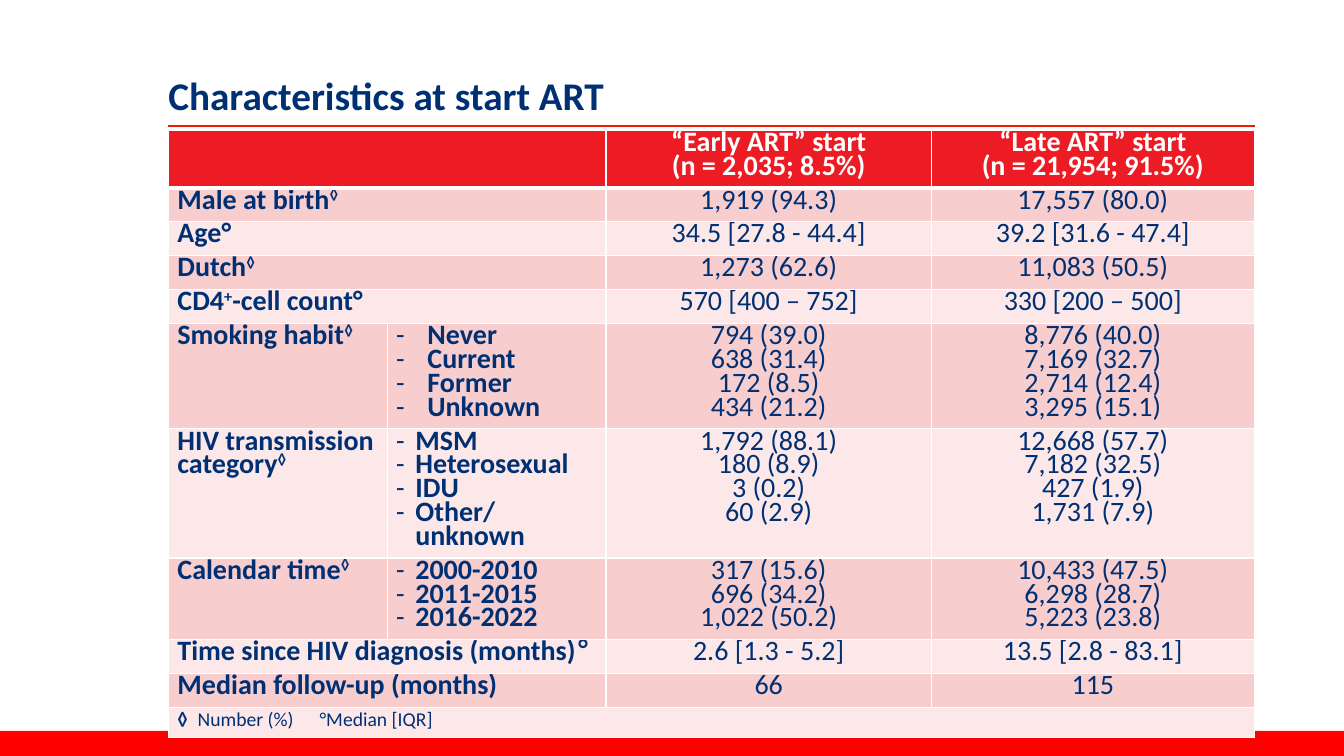
from dataclasses import dataclass

from lxml.etree import SubElement
from pptx import Presentation
from pptx.dml.color import RGBColor
from pptx.enum.shapes import MSO_CONNECTOR, MSO_SHAPE
from pptx.enum.text import MSO_ANCHOR, MSO_AUTO_SIZE, PP_ALIGN
from pptx.oxml.ns import qn
from pptx.util import Inches, Pt


@dataclass(frozen=True)
class Theme:
    navy: str = "003074"
    white: str = "FFFFFF"
    header: str = "ED1C24"
    rule: str = "ED1C00"
    bar: str = "FF0000"
    bands: tuple = ("F8CDCD", "FCE8E8")
    font: str = "Calibri"
    symbol_font: str = "DejaVu Sans"
    title_size: int = 28
    body_size: int = 20
    note_size: int = 14
    body_leading: int = 17
    note_leading: int = 14


THEME = Theme()
TITLE = "Characteristics at start ART"
HEADINGS = [
    ["“Early ART” start", "(n = 2,035; 8.5%)"],
    ["“Late ART” start", "(n = 21,954; 91.5%)"],
]
NUMBER = ("◊", "super")
ROWS = [
    (["Male at birth", NUMBER], [], ["1,919 (94.3)"], ["17,557 (80.0)"]),
    (["Age°"], [], ["34.5 [27.8 - 44.4]"], ["39.2 [31.6 - 47.4]"]),
    (["Dutch", NUMBER], [], ["1,273 (62.6)"], ["11,083 (50.5)"]),
    (["CD4", ("+", "super"), "-cell count°"], [], ["570 [400 – 752]"], ["330 [200 – 500]"]),
    (["Smoking habit", NUMBER], ["Never", "Current", "Former", "Unknown"],
     ["794 (39.0)", "638 (31.4)", "172 (8.5)", "434 (21.2)"],
     ["8,776 (40.0)", "7,169 (32.7)", "2,714 (12.4)", "3,295 (15.1)"]),
    (["HIV transmission category", NUMBER], ["MSM", "Heterosexual", "IDU", "Other/unknown"],
     ["1,792 (88.1)", "180 (8.9)", "3 (0.2)", "60 (2.9)"],
     ["12,668 (57.7)", "7,182 (32.5)", "427 (1.9)", "1,731 (7.9)"]),
    (["Calendar time", NUMBER], ["2000-2010", "2011-2015", "2016-2022"],
     ["317 (15.6)", "696 (34.2)", "1,022 (50.2)"],
     ["10,433 (47.5)", "6,298 (28.7)", "5,223 (23.8)"]),
    (["Time since HIV diagnosis (months)", ("°", "symbol")], [],
     ["2.6 [1.3 - 5.2]"], ["13.5 [2.8 - 83.1]"]),
    (["Median follow-up (months)"], [], ["66"], ["115"]),
]
WRAPPED_LINES = {"HIV transmission category": 5}
BULLET_INDENTS = {"Smoking habit": 0.31}
BULLET_INDENT = 0.19
NOTE = ("\tNumber (%)", "\t°Median [IQR]")
NOTE_TABS = (0.2, 1.41)

LEFT, WIDTH = 1.67, 10.78
RULE_TOP, TABLE_TOP = 1.25, 1.29
COLUMN_WIDTHS = (2.17, 2.17, 3.23, 3.2)
CELL_PADDING = 0.05


def color(value):
    return RGBColor.from_string(value)


def add_run(paragraph, text, ink=THEME.navy, bold=False, size=THEME.body_size, style=""):
    run = paragraph.add_run()
    run.text = text
    run.font.name = THEME.symbol_font if style == "symbol" else THEME.font
    run.font.size = Pt(size)
    run.font.bold = bold
    run.font.color.rgb = color(ink)
    if style == "super":
        run.font._element.set("baseline", "30000")


def add_paragraph(cell, position, align=PP_ALIGN.LEFT, leading=THEME.body_leading):
    frame = cell.text_frame
    paragraph = frame.add_paragraph() if position else frame.paragraphs[0]
    paragraph.alignment = align
    paragraph.line_spacing = Pt(leading)
    return paragraph


def write_values(cell, lines, **style):
    for position, line in enumerate(lines):
        add_run(add_paragraph(cell, position, PP_ALIGN.CENTER), line, **style)


def write_label(cell, parts):
    paragraph = add_paragraph(cell, 0)
    for part in parts:
        text, style = part if isinstance(part, tuple) else (part, "")
        add_run(paragraph, text, bold=True, style=style)


def write_bullets(cell, lines, indent):
    for position, line in enumerate(lines):
        paragraph = add_paragraph(cell, position)
        properties = paragraph._p.get_or_add_pPr()
        properties.set("marL", str(Inches(indent)))
        properties.set("indent", str(-Inches(indent)))
        SubElement(properties, qn("a:buFont"), typeface=THEME.font)
        SubElement(properties, qn("a:buChar"), char="-")
        add_run(paragraph, line, bold=True)


def write_note(cell):
    paragraph = add_paragraph(cell, 0, leading=THEME.note_leading)
    tabs = SubElement(paragraph._p.get_or_add_pPr(), qn("a:tabLst"))
    for stop in NOTE_TABS:
        SubElement(tabs, qn("a:tab"), pos=str(Inches(stop)), algn="l")
    add_run(paragraph, "◊", bold=True, size=THEME.note_size)
    for text in NOTE:
        add_run(paragraph, text, size=THEME.note_size)


def format_cell(cell, row, fill):
    cell.margin_left = cell.margin_right = Inches(0.09)
    cell.margin_top = cell.margin_bottom = Inches(CELL_PADDING)
    properties = cell._tc.get_or_add_tcPr()
    for side in ("L", "R", "T", "B"):
        thick = (row, side) in ((0, "B"), (1, "T"))
        border = SubElement(properties, qn(f"a:ln{side}"), w=str(Pt(3 if thick else 1)))
        SubElement(SubElement(border, qn("a:solidFill")), qn("a:srgbClr"), val=THEME.white)
    cell.fill.solid()
    cell.fill.fore_color.rgb = color(fill)


def row_height(lines, leading=THEME.body_leading):
    return Pt(lines * leading) + Inches(2 * CELL_PADDING)


def add_frame(slide):
    bar = slide.shapes.add_shape(
        MSO_SHAPE.RECTANGLE, 0, Inches(7.25), Inches(13.33), Inches(0.25))
    bar.shadow.inherit = False
    bar.fill.solid()
    bar.fill.fore_color.rgb = color(THEME.bar)
    bar.line.fill.background()
    rule = slide.shapes.add_connector(
        MSO_CONNECTOR.STRAIGHT, Inches(LEFT), Inches(RULE_TOP),
        Inches(LEFT + WIDTH), Inches(RULE_TOP))
    rule.line.color.rgb = color(THEME.rule)
    rule.line.width = Pt(2)
    SubElement(rule._element.spPr, qn("a:effectLst"))


def add_title(slide):
    title = slide.shapes.title
    title.left, title.top = Inches(LEFT), Inches(0.3)
    title.width, title.height = Inches(WIDTH), Inches(0.87)
    frame = title.text_frame
    frame.auto_size = MSO_AUTO_SIZE.NONE
    frame.word_wrap = True
    frame.vertical_anchor = MSO_ANCHOR.BOTTOM
    frame.margin_left = frame.margin_right = frame.margin_top = frame.margin_bottom = 0
    frame.paragraphs[0].alignment = PP_ALIGN.LEFT
    add_run(frame.paragraphs[0], TITLE, bold=True, size=THEME.title_size)


def add_characteristics(slide):
    line_counts = [WRAPPED_LINES.get(label[0], len(early)) for label, _, early, _ in ROWS]
    heights = [row_height(count) for count in (2, *line_counts)]
    heights.append(row_height(1, THEME.note_leading))
    table = slide.shapes.add_table(
        len(heights), len(COLUMN_WIDTHS), Inches(LEFT), Inches(TABLE_TOP),
        Inches(WIDTH), sum(heights)).table
    for column, width in zip(table.columns, COLUMN_WIDTHS):
        column.width = Inches(width)
    for index, height in enumerate(heights):
        table.rows[index].height = height
        fill = THEME.bands[(index - 1) % 2] if index else THEME.header
        for column in range(len(COLUMN_WIDTHS)):
            format_cell(table.cell(index, column), index, fill)

    table.cell(0, 0).merge(table.cell(0, 1))
    for column, heading in enumerate(HEADINGS, 2):
        write_values(table.cell(0, column), heading, ink=THEME.white, bold=True)
    for index, (label, categories, early, late) in enumerate(ROWS, 1):
        write_label(table.cell(index, 0), label)
        if categories:
            indent = BULLET_INDENTS.get(label[0], BULLET_INDENT)
            write_bullets(table.cell(index, 1), categories, indent)
        else:
            table.cell(index, 0).merge(table.cell(index, 1))
        write_values(table.cell(index, 2), early)
        write_values(table.cell(index, 3), late)
    last = len(heights) - 1
    table.cell(last, 0).merge(table.cell(last, 3))
    write_note(table.cell(last, 0))


def main():
    presentation = Presentation()
    presentation.slide_width, presentation.slide_height = Inches(13.33), Inches(7.5)
    slide = presentation.slides.add_slide(presentation.slide_layouts[5])
    add_frame(slide)
    add_title(slide)
    add_characteristics(slide)
    presentation.save("out.pptx")


if __name__ == "__main__":
    main()
